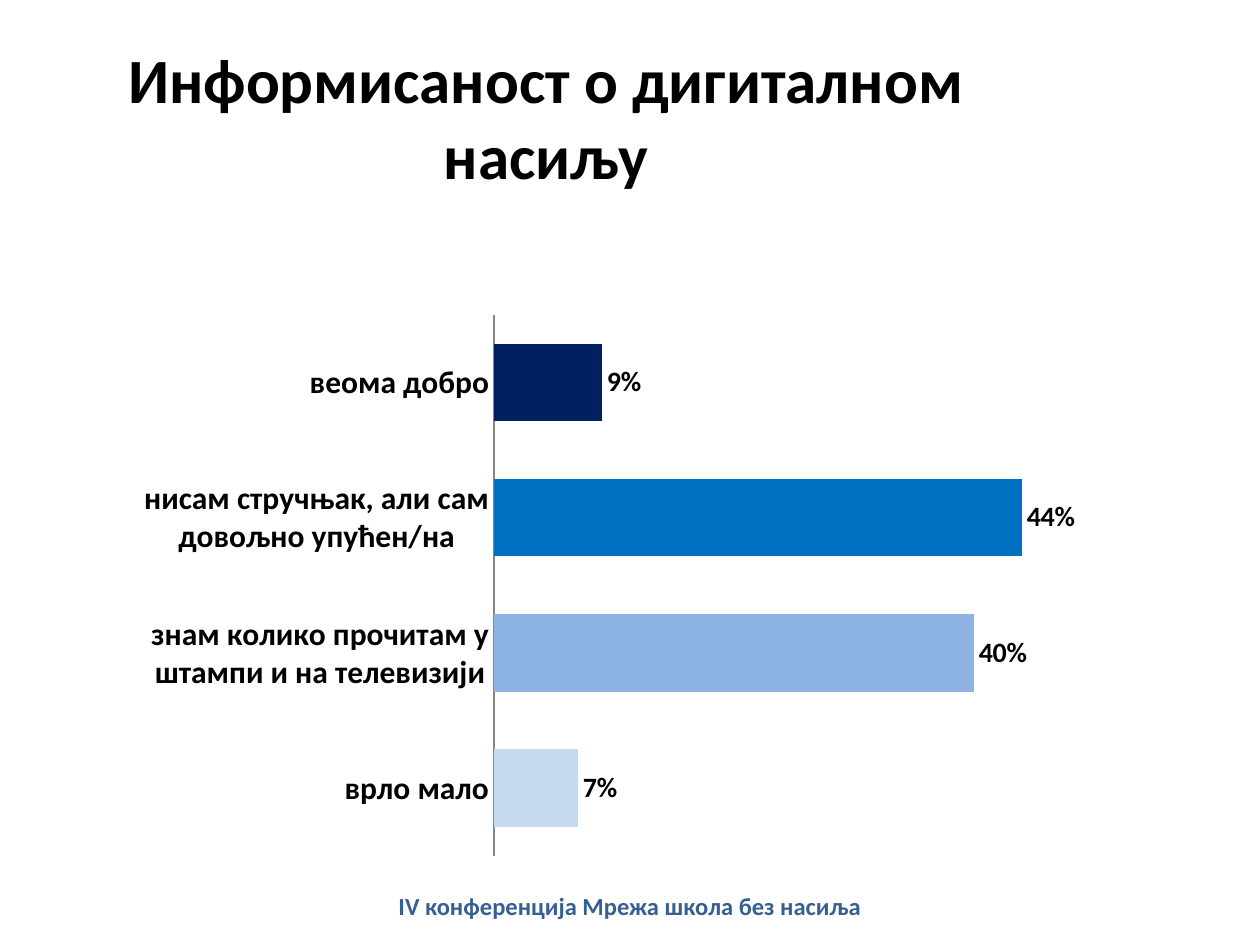
"""Build a slide with a bar chart on awareness of digital violence."""
from lxml import etree
from pptx import Presentation
from pptx.chart.data import CategoryChartData
from pptx.dml.color import RGBColor
from pptx.enum.chart import XL_CHART_TYPE, XL_LABEL_POSITION, XL_TICK_MARK
from pptx.enum.text import MSO_ANCHOR, PP_ALIGN
from pptx.oxml.ns import qn
from pptx.util import Pt

BAR = XL_CHART_TYPE.BAR_CLUSTERED
OUTSIDE_END = XL_LABEL_POSITION.OUTSIDE_END
NO_TICK = XL_TICK_MARK.NONE
MIDDLE = MSO_ANCHOR.MIDDLE
CENTER = PP_ALIGN.CENTER
FONT = "Calibri"
BLACK = RGBColor(0x00, 0x00, 0x00)
GREY = RGBColor(0x86, 0x86, 0x86)
FOOTER_BLUE = RGBColor(0x37, 0x60, 0x92)
SERIES_BLUE = RGBColor(0x4F, 0x81, 0xBD)
ANSWERS = [
    ("врло мало", 0.07, RGBColor(0xC6, 0xD9, 0xF1)),
    ("знам колико прочитам у штампи и на телевизији", 0.4, RGBColor(0x8E, 0xB4, 0xE3)),
    ("нисам стручњак, али сам довољно упућен/на", 0.44, RGBColor(0x00, 0x70, 0xC0)),
    ("веома добро", 0.09, RGBColor(0x00, 0x20, 0x60)),
]
PLOT_LAYOUT = [("layoutTarget", "inner"), ("xMode", "edge"), ("yMode", "edge"),
               ("x", "0.386"), ("y", "0.07"), ("w", "0.595"), ("h", "0.904")]


def set_font(font, size, color, bold=True):
    font.name = FONT
    font.size = Pt(size)
    font.bold = bold
    font.color.rgb = color


prs = Presentation()
prs.slide_width, prs.slide_height = Pt(720), Pt(540)
s = prs.slides.add_slide(prs.slide_layouts[5])

data = CategoryChartData(number_format="0%")
data.categories = [label for label, value, color in ANSWERS]
data.add_series("Series 1", [value for label, value, color in ANSWERS])
chart = s.shapes.add_chart(BAR, Pt(60), Pt(156), Pt(576), Pt(342), data).chart
chart.has_legend = False
chart.has_title = False
set_font(chart.font, 10, BLACK, False)

plot = chart.plots[0]
plot.gap_width = 75
plot.overlap = -25
plot.vary_by_categories = False
series = plot.series[0]
series.format.fill.solid()
series.format.fill.fore_color.rgb = SERIES_BLUE
for i, (label, value, color) in enumerate(ANSWERS):
    fill = series.points[i].format.fill
    fill.solid()
    fill.fore_color.rgb = color

labels = series.data_labels
labels.show_value = True
labels.number_format = "0%"
labels.number_format_is_linked = False
labels.position = OUTSIDE_END
set_font(labels.font, 16, BLACK)

axis = chart.category_axis
axis.major_tick_mark = axis.minor_tick_mark = NO_TICK
axis.format.line.color.rgb = GREY
axis.format.line.width = Pt(0.75)
set_font(axis.tick_labels.font, 18, BLACK)

axis = chart.value_axis
axis.minimum_scale, axis.maximum_scale = 0, 0.5
axis.has_major_gridlines = False
axis.visible = False

plot_area = chart.element.find(".//" + qn("c:plotArea"))
for old in plot_area.findall(qn("c:layout")):
    plot_area.remove(old)
layout = etree.Element(qn("c:layout"))
manual = etree.SubElement(layout, qn("c:manualLayout"))
for tag, val in PLOT_LAYOUT:
    etree.SubElement(manual, qn("c:" + tag)).set("val", val)
plot_area.insert(0, layout)

title = s.shapes.title
title.left, title.top, title.width, title.height = Pt(36), Pt(21.6), Pt(552), Pt(90)
tf = title.text_frame
tf.text = "Информисаност о дигиталном насиљу"
tf.vertical_anchor = MIDDLE
p = tf.paragraphs[0]
p.alignment = CENTER
set_font(p.font, 36, BLACK)

footer = s.shapes.add_textbox(Pt(0), Pt(511.2), Pt(720), Pt(28.8))
tf = footer.text_frame
tf.word_wrap = True
tf.vertical_anchor = MIDDLE
tf.margin_top, tf.margin_bottom = Pt(0), Pt(16)
p = tf.paragraphs[0]
p.text = "IV конференција Мрежа школа без насиља"
p.alignment = CENTER
set_font(p.font, 14, FOOTER_BLUE)

prs.save("out.pptx")
